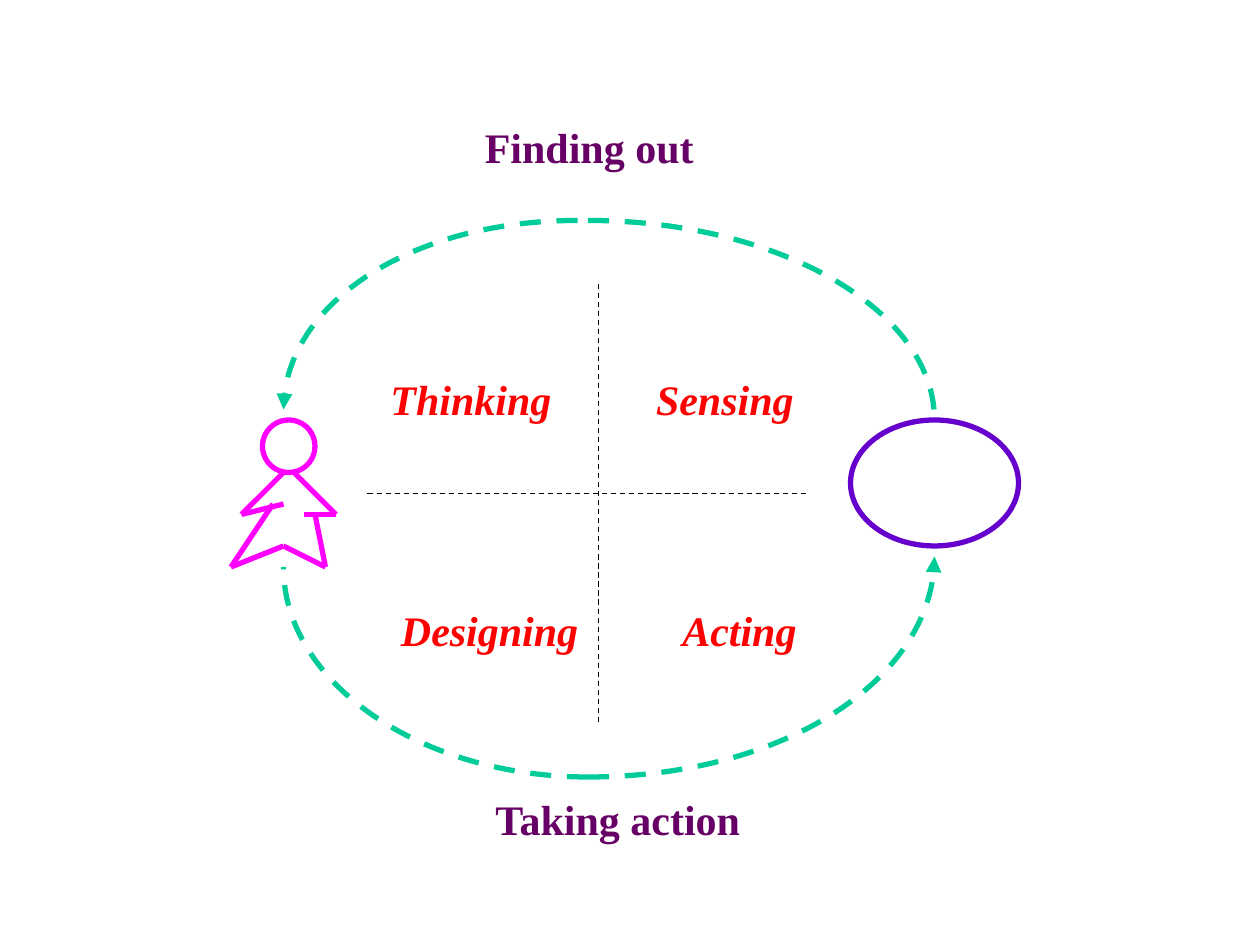
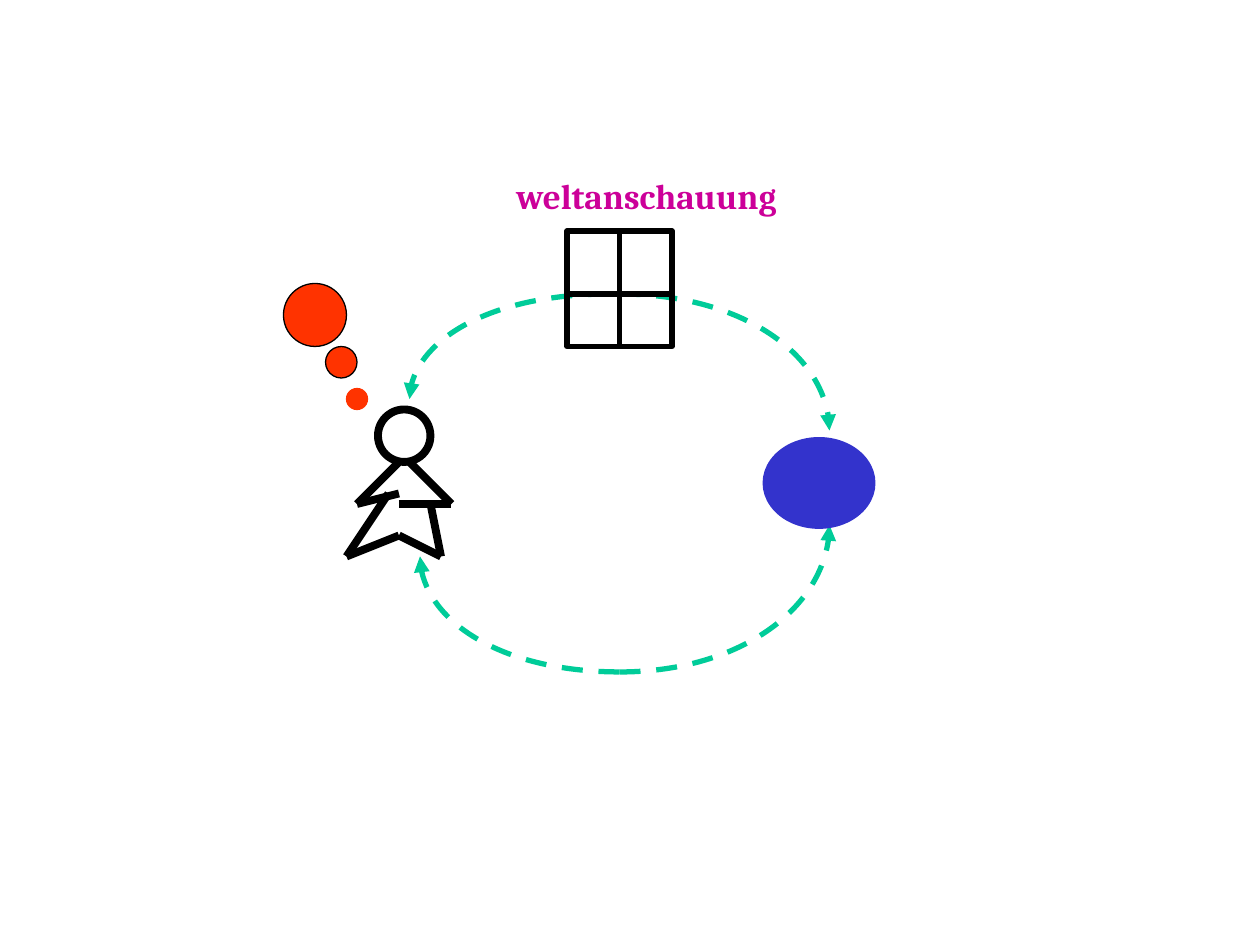
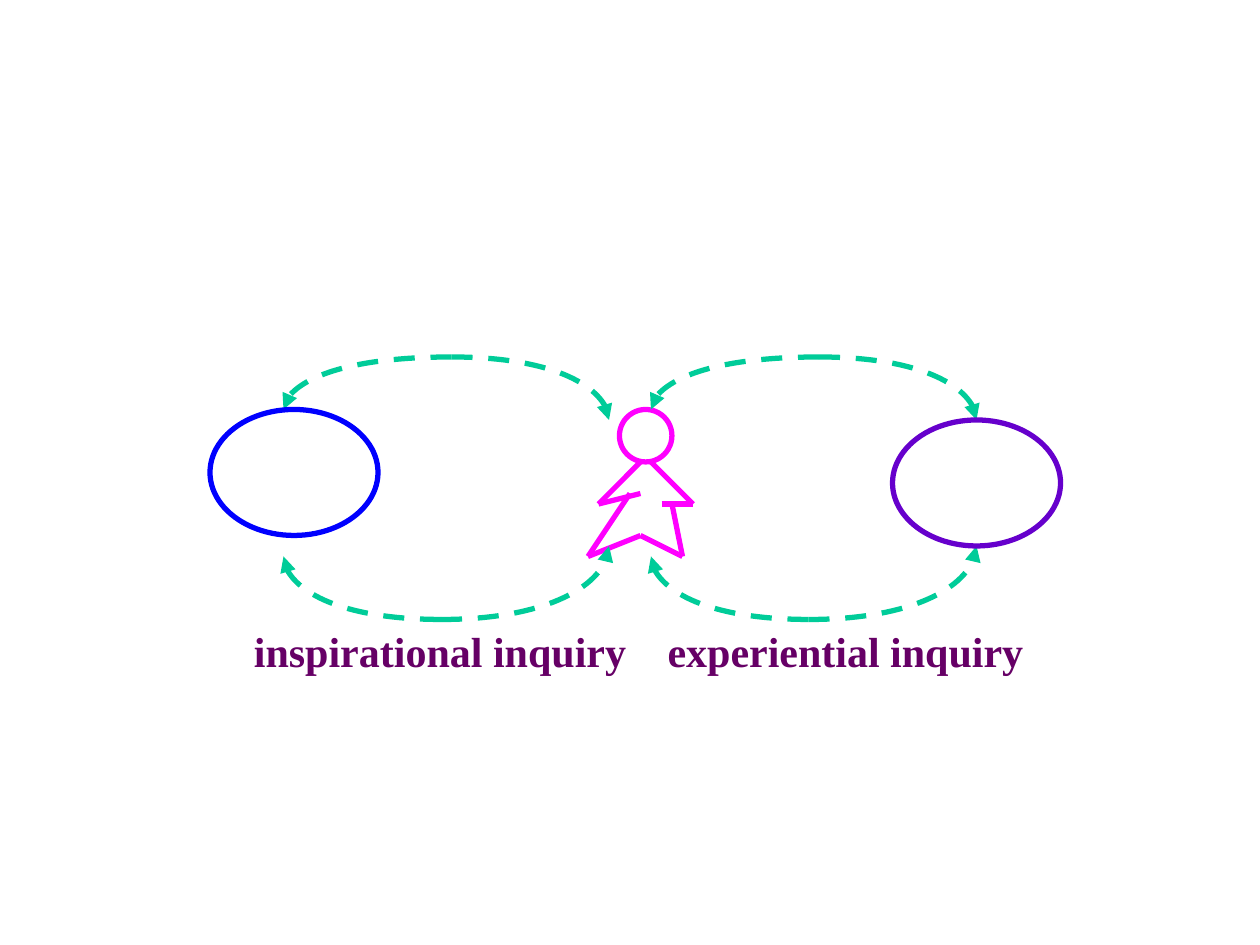
import lxml.etree
import pptx
import pptx.dml.color
import pptx.enum.dml
import pptx.enum.shapes
import pptx.oxml.ns
import pptx.util

COLOURS = {
    "black": "000000", "magenta": "FF00FF", "violet": "6600CC", "blue": "0000FF",
    "indigo": "3333CC", "orange": "FF3300", "green": "00CC99", "plum": "660066",
    "red": "FF0000", "pink": "CC0099",
}
RGB = {name: pptx.dml.color.RGBColor.from_string(code) for name, code in COLOURS.items()}
SHAPES = pptx.enum.shapes.MSO_SHAPE
DASH = pptx.enum.dml.MSO_LINE.DASH
qn = pptx.oxml.ns.qn

# Every position is counted in twelfths of an inch
GRID = pptx.util.Cm(2.54) // 12
CURVE = 0.55  # control point share for a quarter ellipse

# Strokes of the stick figure, relative to the corner of its head
HEAD_SIZE = 5
BODY = [(2, 5, -2, 9), (3, 5, 7, 9), (-2, 9, 2, 8), (1, 8, -3, 14),
        (-3, 14, 2, 12), (2, 12, 6, 14), (5, 9, 6, 14)]

# figure: head x, head y, start of the right hand, colour, line width
# shapes: kind, x, y, width, height, fill, line colour, line width
# strokes: x1, y1, x2, y2, line width, dash
# arcs: apex x, apex y, end x, end y, arrow at the end
# labels: text, x, y, width, size, font, colour, italic
SERIF = "Times New Roman"
PAGES = [
    {
        "figure": (25, 40, 4, "magenta", 3),
        "shapes": [(SHAPES.OVAL, 81, 40, 16, 12, None, "violet", 3)],
        "strokes": [(57, 27, 57, 69, 0.75, DASH), (35, 47, 77, 47, 0.75, DASH)],
        "arcs": [(56, 21, 89, 40, False), (55, 21, 27, 39, True),
                 (56, 74, 27, 54, False), (56, 74, 89, 53, True)],
        "labels": [
            ("Finding out", 45, 11, 61, 24, SERIF, "plum", False),
            ("Taking action", 46, 75, 44, 24, SERIF, "plum", False),
            ("Thinking", 36, 35, 20, 24, SERIF, "red", True),
            ("Sensing", 61.3, 35, 20, 24, SERIF, "red", True),
            ("Designing", 37, 57, 20, 24, SERIF, "red", True),
            ("Acting", 63.8, 57, 20, 24, SERIF, "red", True),
        ],
    },
    {
        "figure": (36, 39, 2, "black", 4.5),
        "shapes": [
            (SHAPES.OVAL, 73, 42, 10, 8, "indigo", "indigo", 4.5),
            (SHAPES.OVAL, 33, 37, 2, 2, "orange", "orange", 0.75),
            (SHAPES.OVAL, 31, 33, 3, 3, "orange", "black", 0.75),
            (SHAPES.OVAL, 27, 27, 6, 6, "orange", "black", 0.75),
            (SHAPES.RECTANGLE, 54, 22, 10, 11, None, "black", 3),
        ],
        "strokes": [(59, 22, 59, 33, 3, None), (54, 28, 64, 28, 3, None)],
        "arcs": [(59, 64, 79, 50, True), (59, 28, 79, 41, True),
                 (58, 28, 39, 38, True), (59, 64, 40, 53, True)],
        "labels": [("weltanschauung", 48, 16, 39, 20, "Cambria", "pink", False)],
    },
    {
        "figure": (59, 39, 4, "magenta", 3),
        "shapes": [(SHAPES.OVAL, 85, 40, 16, 12, None, "violet", 3),
                   (SHAPES.OVAL, 20, 39, 16, 12, None, "blue", 3)],
        "strokes": [],
        "arcs": [(78, 34, 62, 39, True), (78, 34, 93, 40, True),
                 (77, 59, 62, 53, True), (77, 59, 93, 52, True),
                 (42, 59, 58, 52, True), (42, 59, 27, 53, True),
                 (43, 34, 27, 39, True), (43, 34, 58, 40, True)],
        "labels": [
            ("inspirational inquiry", 23, 59, 39, 24, SERIF, "plum", False),
            ("experiential inquiry", 62.4, 59, 39, 24, SERIF, "plum", False),
        ],
    },
]


def add_stroke(page, ends, colour, width, dash=None):
    stroke = page.shapes.add_connector(
        pptx.enum.shapes.MSO_CONNECTOR.STRAIGHT, *[value * GRID for value in ends])
    stroke.line.color.rgb = RGB[colour]
    stroke.line.width = pptx.util.Pt(width)
    if dash:
        stroke.line.dash_style = dash
    lxml.etree.SubElement(stroke.element.spPr, qn("a:effectLst"))


def style_shape(shape, fill, colour, width):
    shape.shadow.inherit = False
    if fill:
        shape.fill.solid()
        shape.fill.fore_color.rgb = RGB[fill]
    else:
        shape.fill.background()
    shape.line.color.rgb = RGB[colour]
    shape.line.width = pptx.util.Pt(width)


deck = pptx.Presentation()
deck.slide_width = pptx.util.Cm(25.4)
deck.slide_height = pptx.util.Cm(19.05)

for content in PAGES:
    page = deck.slides.add_slide(deck.slide_layouts[6])

    # Stick figure
    left, top, hand, colour, width = content["figure"]
    head = page.shapes.add_shape(
        SHAPES.OVAL, left * GRID, top * GRID, HEAD_SIZE * GRID, HEAD_SIZE * GRID)
    style_shape(head, None, colour, width)
    for x1, y1, x2, y2 in BODY + [(hand, 9, 7, 9)]:
        add_stroke(page, (left + x1, top + y1, left + x2, top + y2), colour, width)

    # Dashed quarter ellipses, level at the apex and upright at the end
    for *corners, arrow in content["arcs"]:
        x1, y1, x2, y2 = [value * GRID for value in corners]
        builder = page.shapes.build_freeform(x1, y1)
        builder.add_line_segments([(x2, y2)], close=False)
        arc = builder.convert_to_shape()
        style_shape(arc, None, "green", 3)
        arc.line.dash_style = DASH
        segment = arc.element.xpath(".//a:lnTo")[0]
        curve = lxml.etree.Element(qn("a:cubicBezTo"))
        for x, y in [(x1 + CURVE * (x2 - x1), y1), (x2, y2 - CURVE * (y2 - y1)), (x2, y2)]:
            lxml.etree.SubElement(curve, qn("a:pt"), x=str(round(x - min(x1, x2))),
                                  y=str(round(y - min(y1, y2))))
        segment.getparent().replace(segment, curve)
        if arrow:
            outline = arc.element.xpath(".//a:ln")[0]
            lxml.etree.SubElement(outline, qn("a:tailEnd"), type="triangle")

    # Ovals and window frame
    for kind, left, top, width, height, fill, colour, weight in content["shapes"]:
        shape = page.shapes.add_shape(
            kind, left * GRID, top * GRID, width * GRID, height * GRID)
        style_shape(shape, fill, colour, weight)

    # Dividing lines
    for *ends, width, dash in content["strokes"]:
        add_stroke(page, ends, "black", width, dash)

    # Labels
    for text, left, top, width, size, font, colour, italic in content["labels"]:
        box = page.shapes.add_textbox(
            round(left * GRID), top * GRID, width * GRID, 6 * GRID)
        box.text_frame.word_wrap = True
        span = box.text_frame.paragraphs[0].add_run()
        span.text = text
        span.font.name = font
        span.font.size = pptx.util.Pt(size)
        span.font.bold = True
        span.font.italic = italic
        span.font.color.rgb = RGB[colour]

deck.save("out.pptx")
